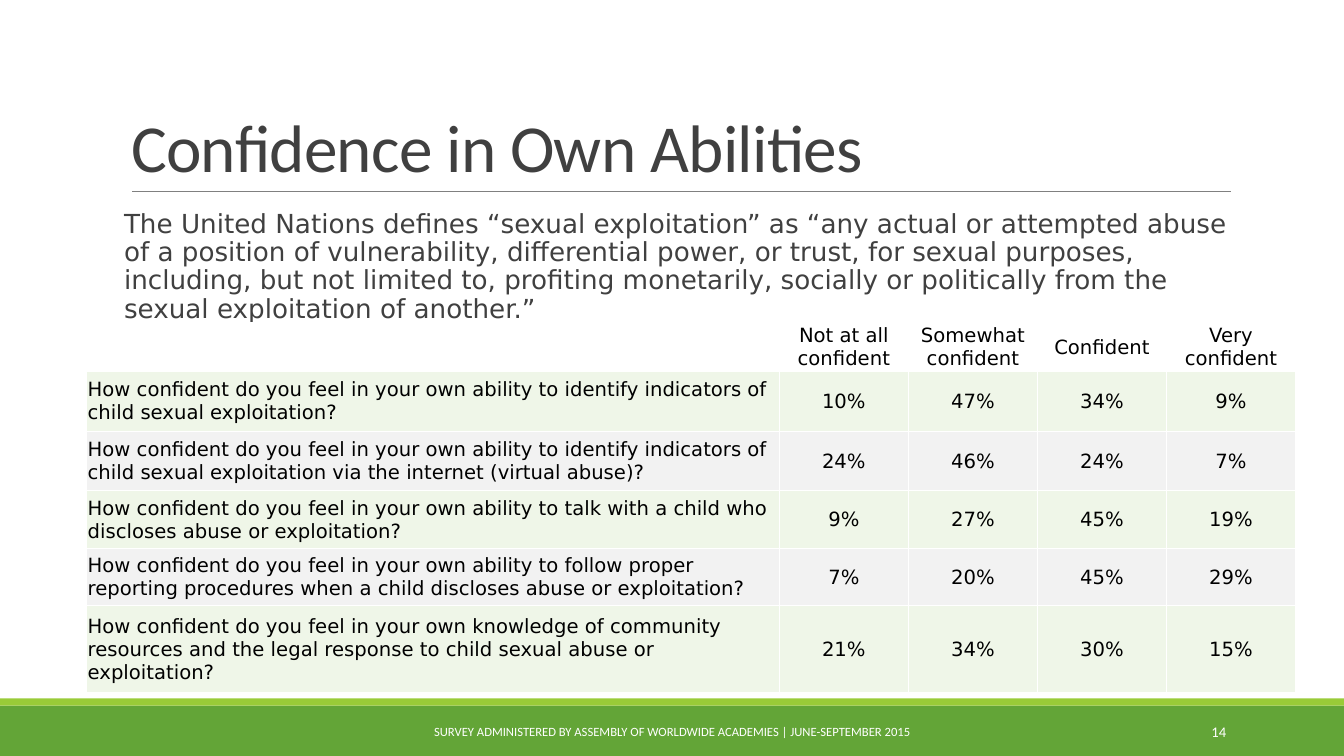
from dataclasses import dataclass

from lxml.etree import SubElement
from pptx import Presentation
from pptx.dml.color import RGBColor
from pptx.enum.shapes import MSO_CONNECTOR as Connector, MSO_SHAPE as Shape
from pptx.enum.text import MSO_ANCHOR as Anchor, MSO_AUTO_SIZE as AutoSize, PP_ALIGN as Align
from pptx.oxml.ns import qn
from pptx.util import Inches, Pt


@dataclass(frozen=True)
class Theme:
    """Colours, fonts and type sizes of the slide."""
    green: str = "63A537"
    lime: str = "99CB38"
    rule: str = "808080"
    dark: str = "404040"
    black: str = "000000"
    white: str = "FFFFFF"
    bands: tuple = ("EFF6E8", "F2F2F2")
    heading_font: str = "Calibri"
    text_font: str = "DejaVu Sans"
    title_size: float = 48
    body_size: float = 18.7
    table_size: float = 14
    footer_size: float = 9
    number_size: float = 10.5


THEME = Theme()
TITLE = "Confidence in Own Abilities"
DEFINITION = (
    "The United Nations defines “sexual exploitation” as “any actual or attempted abuse of a position "
    "of vulnerability, differential power, or trust, for sexual purposes, including, but not limited to, "
    "profiting monetarily, socially or politically from the sexual exploitation of another.”"
)
FOOTER = "SURVEY ADMINISTERED BY ASSEMBLY OF WORLDWIDE ACADEMIES | JUNE-SEPTEMBER 2015"
QUESTION_START = "How confident do you feel in your own "
ANSWERS = ("", "Not at all confident", "Somewhat confident", "Confident", "Very confident")
RESULTS = (
    ("ability to identify indicators of child sexual exploitation?", 10, 47, 34, 9),
    ("ability to identify indicators of child sexual exploitation via the internet (virtual abuse)?",
     24, 46, 24, 7),
    ("ability to talk with a child who discloses abuse or exploitation?", 9, 27, 45, 19),
    ("ability to follow proper reporting procedures when a child discloses abuse or exploitation?",
     7, 20, 45, 29),
    ("knowledge of community resources and the legal response to child sexual abuse or exploitation?",
     21, 34, 30, 15),
)
COLUMN_WIDTHS = (6.87,) + (1.28,) * 4
ROW_HEIGHTS = (0.48, 0.6, 0.59, 0.57, 0.57, 0.86)


def color(value):
    """Turn a hex string into a colour."""
    return RGBColor.from_string(value)


def place(shape, left, top, width, height):
    """Move and size a shape, in inches."""
    shape.left, shape.top = Inches(left), Inches(top)
    shape.width, shape.height = Inches(width), Inches(height)


def write(text_frame, text, size, font, ink, align=Align.LEFT):
    """Set one formatted paragraph and return it."""
    text_frame.text = text
    text_frame.word_wrap = True
    paragraph = text_frame.paragraphs[0]
    paragraph.alignment = align
    for run in paragraph.runs:
        run.font.size = Pt(size)
        run.font.name = font
        run.font.color.rgb = color(ink)
    return paragraph


def add_band(slide, top, height, fill):
    """Add a full-width footer band."""
    band = slide.shapes.add_shape(Shape.RECTANGLE, 0, Inches(top), Inches(13.33), Inches(height))
    band.shadow.inherit = False
    band.fill.solid()
    band.fill.fore_color.rgb = color(fill)
    band.line.fill.background()


def add_rule(slide):
    """Add the thin line below the title."""
    rule = slide.shapes.add_connector(
        Connector.STRAIGHT, Inches(1.31), Inches(1.9), Inches(12.21), Inches(1.9))
    rule.line.color.rgb = color(THEME.rule)
    rule.line.width = Pt(0.5)
    SubElement(rule._element.spPr, qn("a:effectLst"))


def fill_title(title):
    """Fill the title placeholder."""
    place(title, 1.2, 0.31, 11, 1.59)
    frame = title.text_frame
    frame.auto_size = AutoSize.NONE
    frame.vertical_anchor = Anchor.BOTTOM
    paragraph = write(frame, TITLE, THEME.title_size, THEME.heading_font, THEME.dark)
    paragraph.line_spacing = 0.85
    paragraph.runs[0].font._element.set("spc", "-50")


def fill_definition(body):
    """Fill the body placeholder with the definition."""
    place(body, 1.13, 2.04, 11.27, 4.39)
    frame = body.text_frame
    frame.auto_size = AutoSize.NONE
    frame.vertical_anchor = Anchor.TOP
    frame.margin_left = frame.margin_right = 0
    paragraph = write(frame, DEFINITION, THEME.body_size, THEME.text_font, THEME.dark)
    paragraph.line_spacing = 0.9
    paragraph.space_before, paragraph.space_after = Pt(12), Pt(2)
    properties = paragraph._p.get_or_add_pPr()
    properties.set("marL", str(Inches(0.1)))
    properties.set("indent", str(Inches(-0.1)))
    bullet_color = SubElement(properties, qn("a:buClr"))
    SubElement(bullet_color, qn("a:srgbClr"), val=THEME.lime)
    SubElement(properties, qn("a:buChar"), char=" ")


def add_label(slide, left, width, text, size, align):
    """Add a white label on the footer band."""
    label = slide.shapes.add_textbox(Inches(left), Inches(7.06), Inches(width), Inches(0.4))
    label.text_frame.vertical_anchor = Anchor.MIDDLE
    write(label.text_frame, text, size, THEME.heading_font, THEME.white, align)


def format_cell(cell, text, fill, align):
    """Fill one table cell and give it white borders."""
    properties = cell._tc.get_or_add_tcPr()
    for side in ("lnL", "lnR", "lnT", "lnB"):
        border = SubElement(properties, qn(f"a:{side}"), w=str(Pt(1)))
        SubElement(SubElement(border, qn("a:solidFill")), qn("a:srgbClr"), val=THEME.white)
    cell.fill.solid()
    cell.fill.fore_color.rgb = color(fill)
    cell.vertical_anchor = Anchor.MIDDLE
    cell.margin_left = cell.margin_right = cell.margin_top = Inches(0.01)
    cell.margin_bottom = 0
    write(cell.text_frame, text, THEME.table_size, THEME.text_font, THEME.black, align)


def add_results(slide):
    """Add the table of survey answers."""
    rows = [ANSWERS] + [
        (QUESTION_START + question, *(f"{share}%" for share in shares))
        for question, *shares in RESULTS
    ]
    table = slide.shapes.add_table(
        len(rows), len(ANSWERS), Inches(0.86), Inches(3.2),
        Inches(sum(COLUMN_WIDTHS)), Inches(sum(ROW_HEIGHTS))).table
    table.first_row = table.horz_banding = False
    for column, width in zip(table.columns, COLUMN_WIDTHS):
        column.width = Inches(width)
    for index, (row, height, texts) in enumerate(zip(table.rows, ROW_HEIGHTS, rows)):
        row.height = Inches(height)
        fill = THEME.bands[(index - 1) % 2] if index else THEME.white
        for position, (cell, text) in enumerate(zip(row.cells, texts)):
            format_cell(cell, text, fill, Align.CENTER if position else Align.LEFT)


def main():
    """Build and save the slide."""
    presentation = Presentation()
    presentation.slide_width, presentation.slide_height = Inches(13.33), Inches(7.5)
    slide = presentation.slides.add_slide(presentation.slide_layouts[1])
    add_band(slide, 7, 0.5, THEME.green)
    add_band(slide, 6.93, 0.07, THEME.lime)
    add_rule(slide)
    fill_title(slide.shapes.title)
    fill_definition(slide.placeholders[1])
    add_label(slide, 4.03, 5.27, FOOTER, THEME.footer_size, Align.CENTER)
    add_label(slide, 10.83, 1.43, "14", THEME.number_size, Align.RIGHT)
    add_results(slide)
    presentation.save("out.pptx")


if __name__ == "__main__":
    main()
